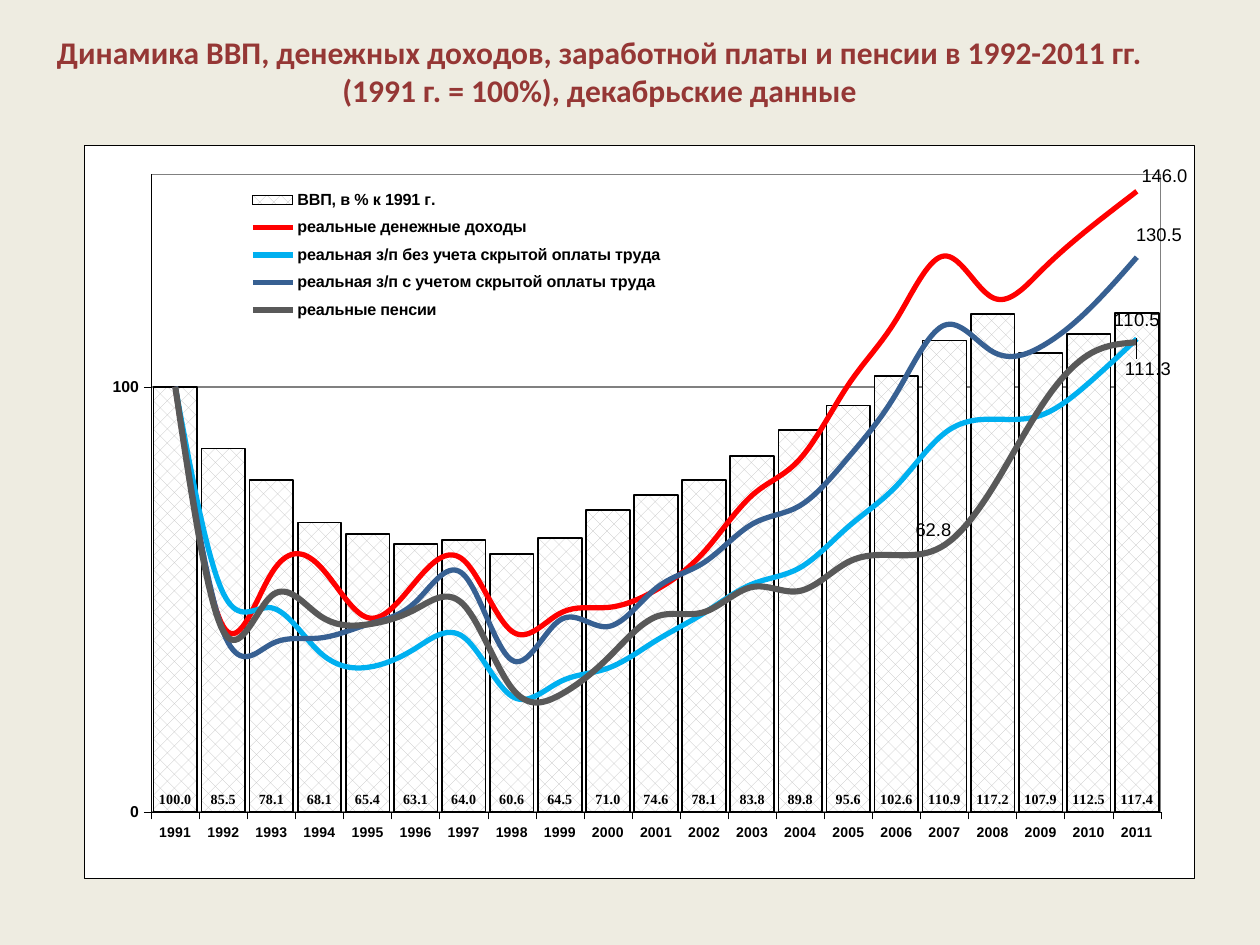
"""Build a slide with GDP columns and income, wage and pension lines."""
import dataclasses

import pptx
import pptx.chart.data
import pptx.dml.color
import pptx.enum.chart
import pptx.enum.dml
import pptx.enum.text
import pptx.oxml
import pptx.oxml.ns
import pptx.util

Inches = pptx.util.Inches
Pt = pptx.util.Pt
Spot = pptx.enum.chart.XL_LABEL_POSITION
qn = pptx.oxml.ns.qn


@dataclasses.dataclass(frozen=True)
class Theme:
    """Colours, fonts and type sizes."""
    back: str = "EEECE1"
    title: str = "953735"
    ink: str = "000000"
    paper: str = "FFFFFF"
    grid: str = "808080"
    hatch: str = "C0C0C0"
    head: str = "Calibri"
    body: str = "Arial"
    serif: str = "Times New Roman"
    head_size: float = 18
    mark_size: float = 10.5
    key_size: float = 9.2
    axis_size: float = 9
    small: float = 8


@dataclasses.dataclass(frozen=True)
class Mark:
    """A value label on one point, shifted by shares of the chart."""
    year: int
    spot: Spot
    dx: float
    dy: float


@dataclasses.dataclass(frozen=True)
class Curve:
    """A smooth line with its values and marks."""
    name: str
    color: str
    width: float
    vals: tuple[float, ...]
    marks: tuple[Mark, ...]


THEME = Theme()
YEARS = range(1991, 2012)
GDP = (100, 85.5, 78.1, 68.1, 65.4, 63.1, 64.0, 60.6, 64.5, 71.0, 74.6,
       78.1, 83.8, 89.8, 95.6, 102.6, 110.9, 117.2, 107.9, 112.5, 117.4)
CURVES = (
    Curve("реальные денежные доходы", "FF0000", 3,
          (100, 43.6, 56.1, 57.9, 45.7, 54.2, 59.2, 42.5, 46.7, 48.1, 52.2,
           61.2, 74.5, 83.1, 100.5, 115.9, 130.8, 121.0, 127.2, 137.2, 146.0),
          (Mark(2011, Spot.ABOVE, 0.025, 0),)),
    Curve("реальная з/п без учета скрытой оплаты труда", "00B0F0", 3,
          (100, 51.4, 48.0, 37.6, 34.0, 38.5, 41.1, 27.2, 30.6, 33.8, 40.3,
           46.8, 53.6, 57.5, 67.1, 76.7, 89.1, 92.4, 93.3, 100.9, 111.3),
          (Mark(2011, Spot.BELOW, 0.01, 0.02),)),
    Curve("реальная з/п с учетом скрытой оплаты труда", "376092", 3,
          (100, 42.3, 39.5, 40.9, 44.1, 49.4, 55.8, 35.7, 45.1, 43.6, 52.6,
           58.7, 67.7, 72.1, 83.4, 98.5, 114.5, 108.3, 109.4, 118.2, 130.5),
          (Mark(2011, Spot.ABOVE, 0.02, -0.01),)),
    Curve("реальные пенсии", "595959", 3.5,
          (100, 42.5, 50.8, 46.2, 44.1, 47.7, 48.7, 29.1, 27.5, 36.2, 45.9,
           47.0, 52.9, 52.0, 58.8, 60.4, 62.8, 76.2, 95.2, 107.6, 110.5),
          (Mark(2007, Spot.ABOVE, -0.01, 0),
           Mark(2011, Spot.ABOVE, 0, -0.01))),
)


def rgb(code: str) -> pptx.dml.color.RGBColor:
    """Turn a hex code into a colour."""
    return pptx.dml.color.RGBColor.from_string(code)


def style(font, face: str, size: float, color: str, bold: bool) -> None:
    """Set the look of a font."""
    font.name, font.size, font.bold = face, Pt(size), bold
    font.color.rgb = rgb(color)


def stroke(line, color: str, width: float) -> None:
    """Set the colour and width of a line."""
    line.color.rgb = rgb(color)
    line.width = Pt(width)


def node(body: str):
    """Make a chart element from its markup."""
    tag, rest = body.split(">", 1)
    spaces = pptx.oxml.ns.nsdecls("c", "a")
    return pptx.oxml.parse_xml(f"{tag} {spaces}>{rest}")


def layout(**parts: object):
    """Make a manual layout from its parts."""
    inner = "".join(f'<c:{key} val="{val}"/>' for key, val in parts.items())
    return node(f"<c:layout><c:manualLayout>{inner}</c:manualLayout></c:layout>")


def frame(x: float, y: float, w: float, h: float, **target: str):
    """Make a layout that fixes a box."""
    return layout(**target, xMode="edge", yMode="edge", x=x, y=y, w=w, h=h)


def box(fill: str, color: str, width: float):
    """Make the fill and border of a chart part."""
    def paint(code: str) -> str:
        return f'<a:solidFill><a:srgbClr val="{code}"/></a:solidFill>'
    return node(f'<c:spPr>{paint(fill)}<a:ln w="{Pt(width)}">'
                f'{paint(color)}</a:ln></c:spPr>')


def strip(parent, tag: str) -> None:
    """Remove the children that bear a tag."""
    for child in parent.findall(qn(tag)):
        parent.remove(child)


def split(chart) -> None:
    """Move every series but the first into a line plot."""
    bars = chart.plots[0]._element
    lines = node('<c:lineChart><c:grouping val="standard"/>'
                 '<c:varyColors val="0"/><c:marker val="1"/></c:lineChart>')
    stop = lines.find(qn("c:marker"))
    for ser in bars.findall(qn("c:ser"))[1:]:
        strip(ser, "c:invertIfNegative")
        stop.addprevious(ser)
    for axis in bars.findall(qn("c:axId")):
        lines.append(node(f'<c:axId val="{axis.get("val")}"></c:axId>'))
    bars.addnext(lines)


def draw_bars(plot) -> None:
    """Format the columns and their labels."""
    plot.gap_width, plot.vary_by_categories = 10, False
    look = plot.series[0].format
    look.fill.patterned()
    look.fill.pattern = pptx.enum.dml.MSO_PATTERN.PERCENT_25
    look.fill.fore_color.rgb = rgb(THEME.hatch)
    look.fill.back_color.rgb = rgb(THEME.paper)
    stroke(look.line, THEME.ink, 1)
    tags = plot.series[0].data_labels
    tags.show_value, tags.position = True, Spot.INSIDE_BASE
    style(tags.font, THEME.serif, THEME.small, THEME.ink, True)


def draw_curve(ser, curve: Curve) -> None:
    """Format one line and label its marked points."""
    ser.smooth = True
    ser.marker.style = pptx.enum.chart.XL_MARKER_STYLE.NONE
    stroke(ser.format.line, curve.color, curve.width)
    ser.data_labels.show_value = False
    for mark in curve.marks:
        spot = YEARS.index(mark.year)
        tag = ser.points[spot].data_label
        tag.position = mark.spot
        style(tag.font, THEME.body, THEME.mark_size, THEME.ink, False)
        idx = ser._element.xpath(f'c:dLbls/c:dLbl/c:idx[@val="{spot}"]')[0]
        idx.addnext(layout(x=mark.dx, y=mark.dy))


def draw_axes(chart) -> None:
    """Format both axes and the grid."""
    years, share = chart.category_axis, chart.value_axis
    for axis, size in ((years, THEME.small), (share, THEME.axis_size)):
        axis.major_tick_mark = pptx.enum.chart.XL_TICK_MARK.OUTSIDE
        style(axis.tick_labels.font, THEME.body, size, THEME.ink, True)
        stroke(axis.format.line, THEME.ink, 0.25)
    share.minimum_scale, share.maximum_scale, share.major_unit = 0, 150, 100
    share.tick_labels.number_format = "0"
    share.tick_labels.number_format_is_linked = False
    stroke(share.major_gridlines.format.line, THEME.grid, 1)


def draw_frame(chart) -> None:
    """Place the legend and plot area and set their backs."""
    chart.has_legend = True
    key = chart.legend
    key.position = pptx.enum.chart.XL_LEGEND_POSITION.RIGHT
    key.include_in_layout = True
    style(key.font, THEME.body, THEME.key_size, THEME.ink, True)
    area = chart._chartSpace.chart.plotArea
    for part in (key._element, area):
        strip(part, "c:layout")
    key._element.get_or_add_legendPos().addnext(frame(0.14, 0.05, 0.39, 0.2))
    area.insert(0, frame(0.06, 0.04, 0.91, 0.87, layoutTarget="inner"))
    area.append(box(THEME.paper, THEME.grid, 0.5))
    chart._chartSpace.chart.addnext(box(THEME.paper, THEME.ink, 0.25))


def draw_chart(slide) -> None:
    """Add the combined chart."""
    data = pptx.chart.data.CategoryChartData(number_format="0.0")
    data.categories = [str(year) for year in YEARS]
    data.add_series("ВВП, в % к 1991 г.", GDP)
    for curve in CURVES:
        data.add_series(curve.name, curve.vals)
    kind = pptx.enum.chart.XL_CHART_TYPE.COLUMN_CLUSTERED
    chart = slide.shapes.add_chart(kind, Inches(0.67), Inches(1.15),
                                   Inches(8.81), Inches(5.82), data).chart
    chart.has_title = False
    style(chart.font, THEME.body, THEME.mark_size, THEME.ink, False)
    split(chart)
    bars, lines = chart.plots
    draw_bars(bars)
    for ser, curve in zip(lines.series, CURVES):
        draw_curve(ser, curve)
    draw_axes(chart)
    draw_frame(chart)


def draw_title(slide) -> None:
    """Fill and place the title."""
    title = slide.shapes.title
    title.left, title.top = Inches(0.35), Inches(0.21)
    title.width, title.height = Inches(8.82), Inches(0.71)
    para = title.text_frame.paragraphs[0]
    para.alignment = pptx.enum.text.PP_ALIGN.CENTER
    run = para.add_run()
    run.text = ("Динамика ВВП, денежных доходов, заработной платы и пенсии "
                "в 1992-2011 гг. (1991 г. = 100%), декабрьские данные")
    style(run.font, THEME.head, THEME.head_size, THEME.title, True)


def main() -> None:
    """Build and save the deck."""
    deck = pptx.Presentation()
    deck.slide_width, deck.slide_height = Inches(10), Inches(7.5)
    slide = deck.slides.add_slide(deck.slide_layouts[5])
    slide.background.fill.solid()
    slide.background.fill.fore_color.rgb = rgb(THEME.back)
    draw_chart(slide)
    draw_title(slide)
    deck.save("out.pptx")


if __name__ == "__main__":
    main()
